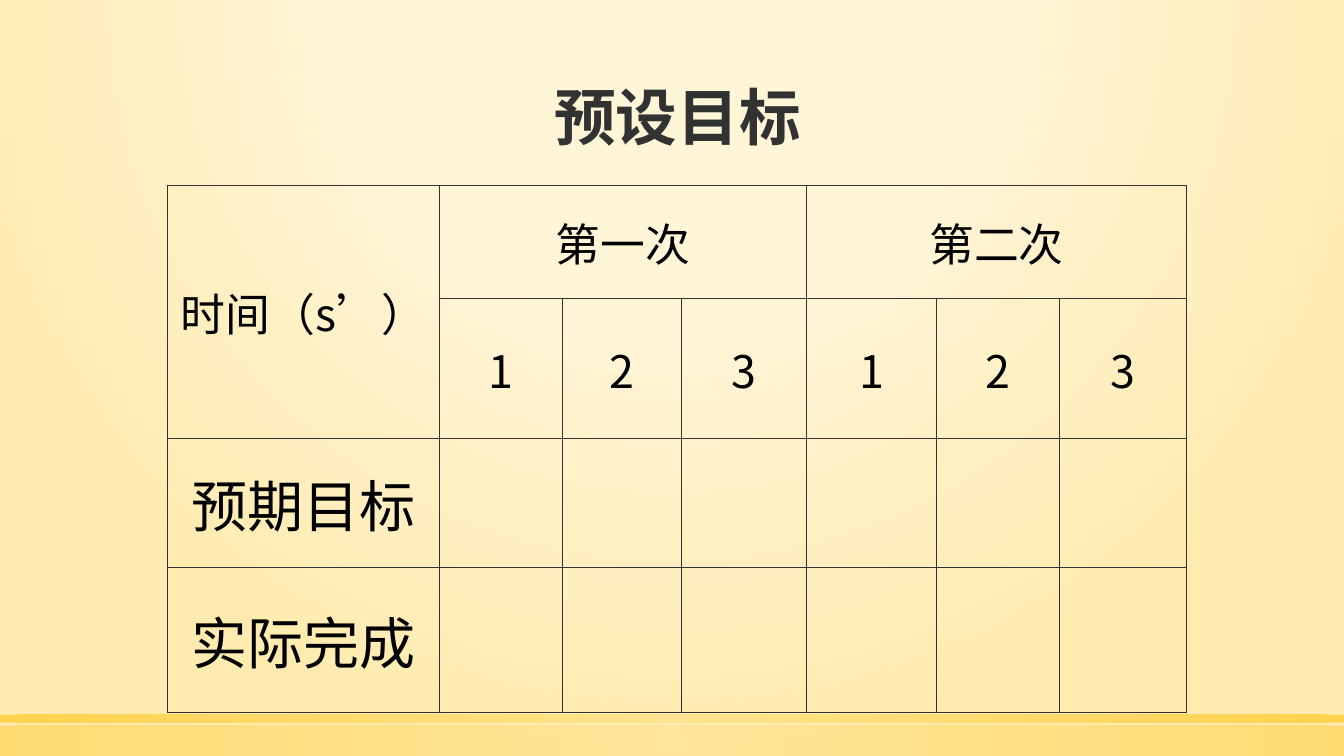
from lxml import etree
from pptx import Presentation
from pptx.dml import color
from pptx.enum import lang, shapes, text
from pptx.oxml import ns, parse_xml
from pptx.util import Inches, Pt

COLOURS = {
    "ink": "323232", "text": "000000",
    "cream": "FFF5D7", "sand": "FFEBAF",
    "light gold": "FFE186", "gold": "FFCD36",
}
FONT = "Noto Sans CJK SC"
COLUMN_WIDTHS = [2.7, 1.22, 1.18, 1.24, 1.29, 1.22, 1.26]
ROW_HEIGHTS = [1.12, 1.39, 1.28, 1.44]


def gradient_xml(stops, focus):
    """Circular gradient; stops are (position, colour, opacity) in percent."""
    stop_xml = "".join(
        f'<a:gs pos="{position * 1000}"><a:srgbClr val="{COLOURS[colour]}">'
        f'<a:alpha val="{opacity * 1000}"/></a:srgbClr></a:gs>'
        for position, colour, opacity in stops)
    sides = " ".join(f'{side}="{value * 1000}"' for side, value in zip("ltrb", focus))
    return (f'<a:gradFill {ns.nsdecls("a")} rotWithShape="1"><a:gsLst>{stop_xml}</a:gsLst>'
            f'<a:path path="circle"><a:fillToRect {sides}/></a:path></a:gradFill>')


class SlideBuilder:
    def __init__(self, presentation):
        self.slide = presentation.slides.add_slide(presentation.slide_layouts[5])
        self.style = {"name": FONT, "language_id": lang.MSO_LANGUAGE_ID.SIMPLIFIED_CHINESE}

    def background(self, stops, focus):
        self.slide._element.cSld.insert(0, parse_xml(
            f'<p:bg {ns.nsdecls("p", "a")}><p:bgPr>{gradient_xml(stops, focus)}'
            '<a:effectLst/></p:bgPr></p:bg>'))

    def band(self, top, height, opacity):
        band = self.slide.shapes.add_shape(
            shapes.MSO_SHAPE.RECTANGLE, 0, Inches(top), Inches(13.33), Inches(height))
        band.shadow.inherit = False
        band.line.fill.background()
        stops = [(0, "light gold", opacity), (100, "gold", opacity)]
        geometry = band._element.spPr.find(ns.qn("a:prstGeom"))
        geometry.addnext(parse_xml(gradient_xml(stops, (50, 50, 50, 50))))

    def add_text(self, frame, words, colour="text", line_spacing=None, **style):
        paragraph = frame.paragraphs[0]
        paragraph.alignment = text.PP_ALIGN.CENTER
        paragraph.line_spacing = line_spacing
        run = paragraph.add_run()
        run.text = words
        for name, value in {**self.style, **style}.items():
            setattr(run.font, name, value)
        run.font.color.rgb = color.RGBColor.from_string(COLOURS[colour])
        # East Asian typeface follows the Latin one
        latin = run._r.rPr.find(ns.qn("a:latin"))
        latin.addnext(etree.Element(ns.qn("a:ea"), typeface=FONT))

    def title(self, words, left, top, width, height):
        title = self.slide.shapes.title
        box = {"left": left, "top": top, "width": width, "height": height}
        for name, value in box.items():
            setattr(title, name, Inches(value))
        title.text_frame.vertical_anchor = text.MSO_ANCHOR.BOTTOM
        self.add_text(title.text_frame, words, "ink", 0.9, size=Pt(44), bold=True)

    def table(self, left, top, widths, heights):
        table = self.slide.shapes.add_table(
            len(heights), len(widths), Inches(left), Inches(top),
            Inches(sum(widths)), Inches(sum(heights))).table
        for flag in ("first_row", "horz_banding"):
            setattr(table, flag, False)
        for column, width in zip(table.columns, widths):
            column.width = Inches(width)
        for row, height in zip(table.rows, heights):
            row.height = Inches(height)
        for cell in table.iter_cells():
            cell.fill.background()
            cell.vertical_anchor = text.MSO_ANCHOR.MIDDLE
            self.borders(cell)
        return table

    def borders(self, cell):
        properties = cell._tc.get_or_add_tcPr()
        for index, side in enumerate("LRTB"):
            properties.insert(index, parse_xml(
                f'<a:ln{side} {ns.nsdecls("a")} w="12700"><a:solidFill>'
                f'<a:srgbClr val="{COLOURS["ink"]}"/></a:solidFill></a:ln{side}>'))


def main():
    presentation = Presentation()
    presentation.slide_width, presentation.slide_height = Inches(13.33), Inches(7.5)
    builder = SlideBuilder(presentation)

    # Backdrop and bottom bands
    builder.background([(0, "cream", 59), (40, "cream", 66), (100, "sand", 100)],
                       (50, -80, 50, 180))
    builder.band(7.2, 0.3, 50)
    builder.band(7.09, 0.08, 80)

    builder.title("预设目标", 1.52, 0.23, 10.4, 1.35)

    # Goal table: two attempts with three rounds each
    table = builder.table(1.66, 1.84, COLUMN_WIDTHS, ROW_HEIGHTS)
    table.cell(0, 0).merge(table.cell(1, 0))
    builder.add_text(table.cell(0, 0).text_frame, "时间（s’）", size=Pt(32))
    for first, attempt in ((1, "第一次"), (4, "第二次")):
        table.cell(0, first).merge(table.cell(0, first + 2))
        builder.add_text(table.cell(0, first).text_frame, attempt, size=Pt(32))
        for offset in range(3):
            builder.add_text(table.cell(1, first + offset).text_frame,
                             str(offset + 1), size=Pt(32))
    for row, label in ((2, "预期目标"), (3, "实际完成")):
        builder.add_text(table.cell(row, 0).text_frame, label, size=Pt(40))

    presentation.save("out.pptx")


if __name__ == "__main__":
    main()
